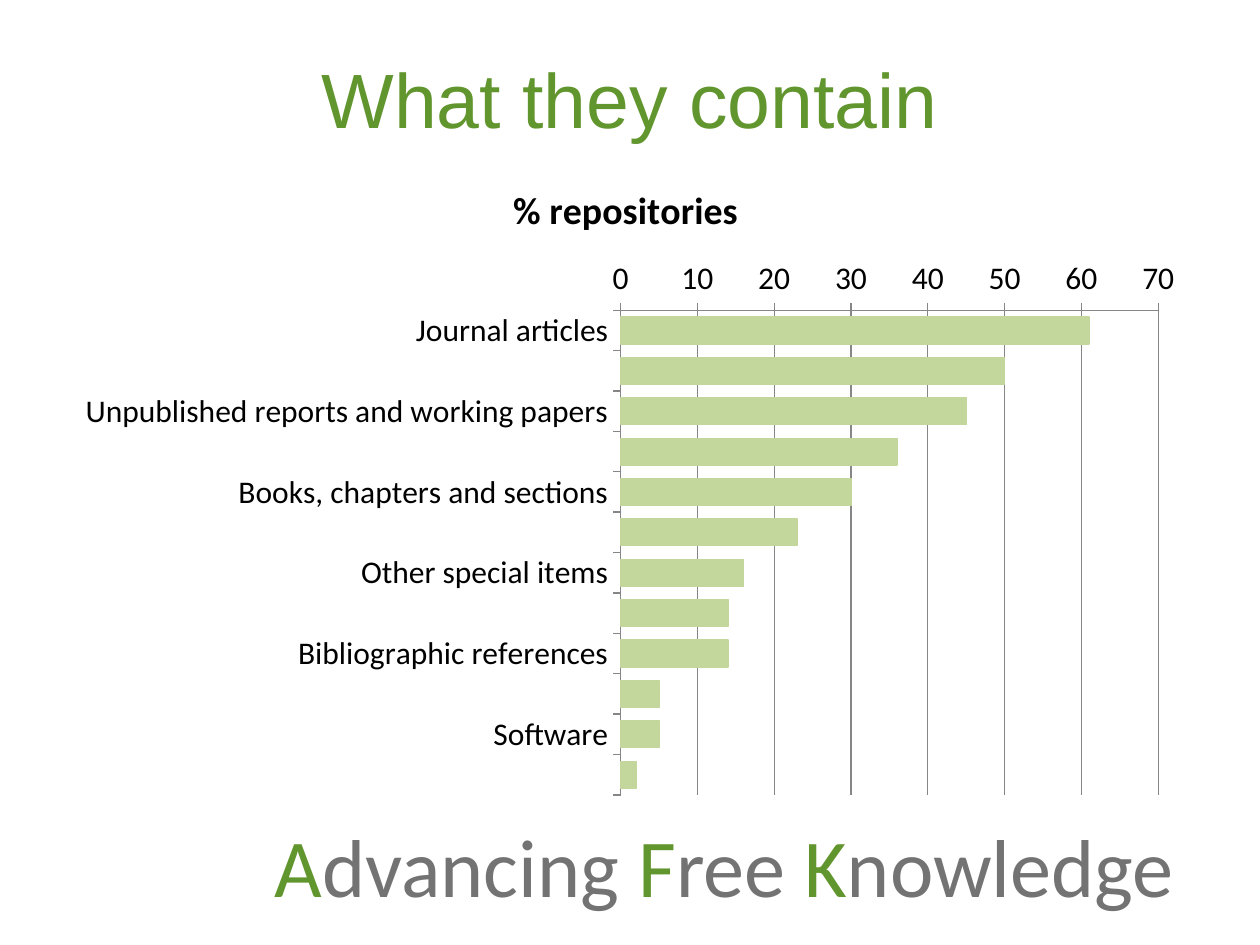
from lxml.etree import SubElement
from pptx import Presentation
from pptx.chart.data import CategoryChartData
from pptx.dml.color import RGBColor
from pptx.enum.chart import XL_CHART_TYPE as ChartType, XL_TICK_MARK as TickMark
from pptx.enum.text import MSO_ANCHOR as Anchor, MSO_AUTO_SIZE as AutoSize, PP_ALIGN as Align
from pptx.oxml.ns import qn
from pptx.util import Pt

# Content
TITLE = "What they contain"
SERIES = "% repositories "
CONTENTS = [
    ("Journal articles", 61),
    ("Theses & dissertations", 50),
    ("Unpublished reports and working papers", 45),
    ("Conference and workshop papers", 36),
    ("Books, chapters and sections", 30),
    ("Multimedia and audiovisual material", 23),
    ("Other special items", 16),
    ("Learning objects", 14),
    ("Bibliographic references", 14),
    ("Datasets", 5),
    ("Software", 5),
    ("Patents", 2),
]
FOOTER = ["Advancing ", "Free ", "Knowledge"]

# Layout in px and formats
EMU_PER_PX = 914400 / 126
SLIDE_SIZE = (1260, 945)
TITLE_BOX = (63, 38, 1134, 120)
CHART_BOX = (63, 157, 1134, 651)
FOOTER_BOX = (262, 809, 966, 112)
COLORS = {"green": "61952D", "bar": "C3D69B", "text": "000000", "axis": "868686"}
FOOTER_ALPHA = 54000
FORMATS = {
    "title": {"size": Pt(44), "name": "Arial", "bold": False},
    "footer": {"size": Pt(47), "name": "Calibri"},
    "chart": {"size": Pt(18), "name": "Calibri"},
    "chart title": {"size": Pt(21.6), "name": "Calibri", "bold": True},
}


def px(*values):
    return [round(value * EMU_PER_PX) for value in values]


def style(font, kind, color):
    for name, value in FORMATS[kind].items():
        setattr(font, name, value)
    font.color.rgb = RGBColor.from_string(COLORS[color])


def add_title(slide):
    title = slide.shapes.title
    title.left, title.top, title.width, title.height = px(*TITLE_BOX)
    title.text_frame.text = TITLE
    title.text_frame.vertical_anchor = Anchor.MIDDLE
    paragraph = title.text_frame.paragraphs[0]
    paragraph.alignment = Align.CENTER
    style(paragraph.runs[0].font, "title", "green")


def add_chart(slide):
    data = CategoryChartData()
    data.categories = [label for label, _ in CONTENTS]
    data.add_series(SERIES, [value for _, value in CONTENTS])
    chart = slide.shapes.add_chart(ChartType.BAR_CLUSTERED, *px(*CHART_BOX), data).chart
    style(chart.font, "chart", "text")
    chart.has_legend = False
    chart.has_title = True
    chart.chart_title.text_frame.text = SERIES
    style(chart.chart_title.text_frame.paragraphs[0].runs[0].font, "chart title", "text")

    # Bars
    plot = chart.plots[0]
    plot.gap_width = 50
    plot.vary_by_categories = False
    bars = plot.series[0].format
    bars.fill.solid()
    bars.fill.fore_color.rgb = bars.line.color.rgb = RGBColor.from_string(COLORS["bar"])
    bars.line.width = Pt(0.75)

    # Axes, with the first category on top
    chart.category_axis.reverse_order = True
    chart.value_axis.has_major_gridlines = True
    for axis in (chart.category_axis, chart.value_axis):
        axis.major_tick_mark = TickMark.OUTSIDE
        axis.minor_tick_mark = TickMark.NONE
    for part in (chart.category_axis, chart.value_axis, chart.value_axis.major_gridlines):
        part.format.line.color.rgb = RGBColor.from_string(COLORS["axis"])
        part.format.line.width = Pt(0.75)


def add_footer(slide):
    frame = slide.shapes.add_textbox(*px(*FOOTER_BOX)).text_frame
    frame.word_wrap = True
    frame.auto_size = AutoSize.SHAPE_TO_FIT_TEXT
    paragraph = frame.paragraphs[0]
    for word in FOOTER:
        for text, color in ((word[0], "green"), (word[1:], "text")):
            run = paragraph.add_run()
            run.text = text
            style(run.font, "footer", color)
            if color == "text":
                fill_color = run.font._element.find(f".//{qn('a:srgbClr')}")
                SubElement(fill_color, qn("a:alpha"), val=str(FOOTER_ALPHA))


def main():
    presentation = Presentation()
    presentation.slide_width, presentation.slide_height = px(*SLIDE_SIZE)
    slide = presentation.slides.add_slide(presentation.slide_layouts[5])
    add_title(slide)
    add_chart(slide)
    add_footer(slide)
    presentation.save("out.pptx")


if __name__ == "__main__":
    main()
